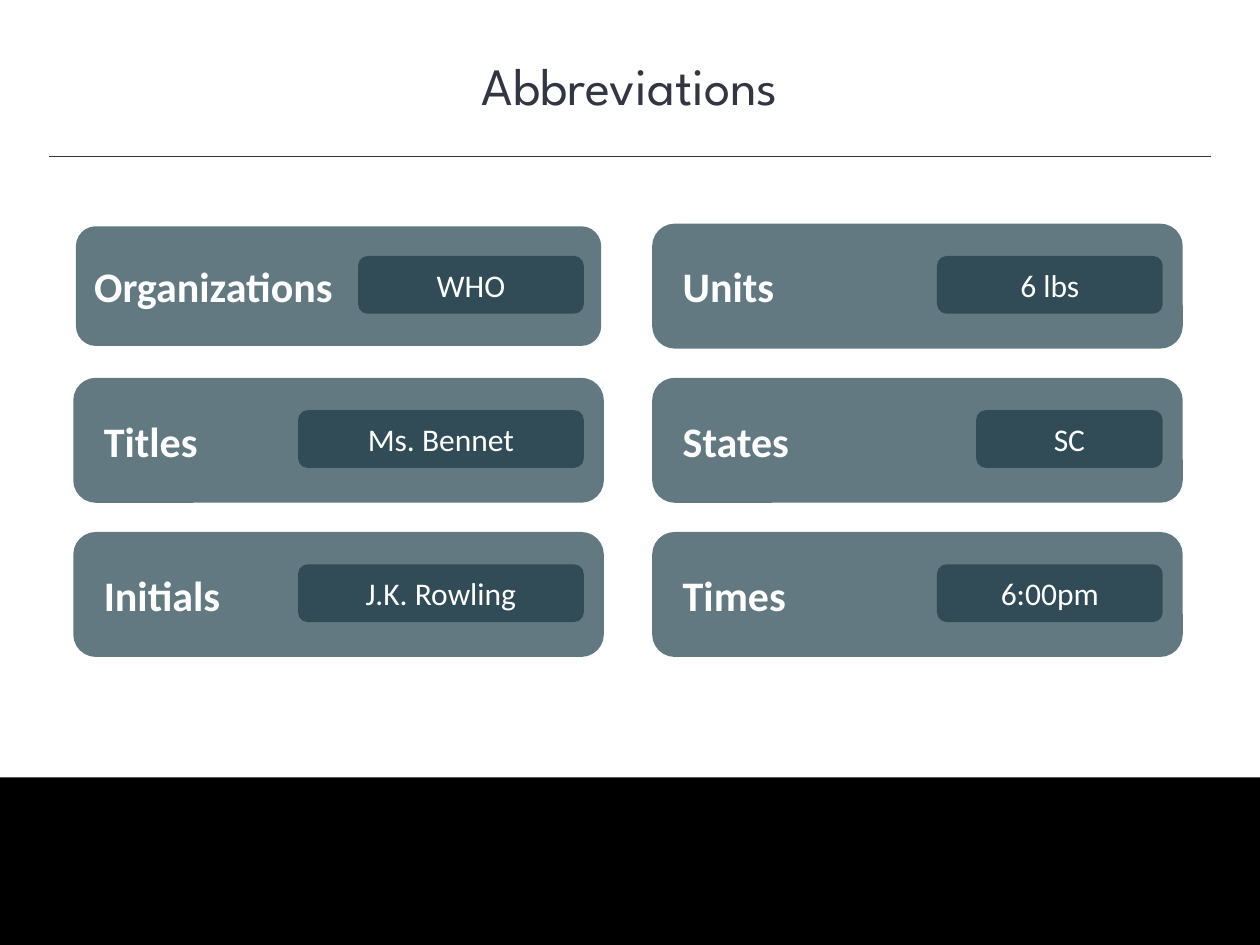
from lxml.etree import SubElement
from pptx import Presentation
from pptx.dml.color import RGBColor
from pptx.enum.shapes import MSO_CONNECTOR, MSO_SHAPE
from pptx.enum.text import MSO_ANCHOR, MSO_AUTO_SIZE, PP_ALIGN
from pptx.oxml.ns import qn
from pptx.util import Pt

INK, CARD, PILL, WHITE, BLACK = "323542", "627981", "314C57", "FFFFFF", "000000"
CARD_WIDTH, CARD_HEIGHT, PILL_HEIGHT = 300.2, 68.4, 33


def add_block(kind, left, top, width, height, color):
    """Add a filled shape without line or shadow."""
    block = page.shapes.add_shape(kind, Pt(left), Pt(top), Pt(width), Pt(height))
    block.shadow.inherit = False
    block.fill.solid()
    block.fill.fore_color.rgb = RGBColor.from_string(color)
    block.line.fill.background()
    return block


def write(box, text, font, size, color, align, anchor, bold=False):
    frame = box.text_frame
    frame.word_wrap = True
    frame.auto_size = MSO_AUTO_SIZE.NONE
    frame.vertical_anchor = anchor
    para = frame.paragraphs[0]
    para.alignment = align
    span = para.add_run()
    span.text = text
    span.font.name = font
    span.font.size = Pt(size)
    span.font.bold = bold
    span.font.color.rgb = RGBColor.from_string(color)


deck = Presentation()
deck.slide_width, deck.slide_height = Pt(720), Pt(540)
page = deck.slides.add_slide(deck.slide_layouts[5])
page.background.fill.solid()
page.background.fill.fore_color.rgb = RGBColor.from_string(WHITE)

title = page.shapes.title
title.left, title.top, title.width, title.height = Pt(0), Pt(26.6), Pt(720), Pt(43.9)
write(title, "Abbreviations", "League Spartan", 30, INK, PP_ALIGN.CENTER, MSO_ANCHOR.TOP)

rule = page.shapes.add_connector(MSO_CONNECTOR.STRAIGHT, Pt(28), Pt(89.5), Pt(692), Pt(89.5))
rule.line.color.rgb = RGBColor.from_string(INK)
rule.line.width = Pt(1)
SubElement(rule._element.spPr, qn("a:effectLst"))

add_block(MSO_SHAPE.RECTANGLE, 0, 444.2, 720, 95.8, BLACK)

# Each column: left edge, then (category, example, width of the example)
columns = [
    (43.4, [("Organizations", "WHO", 129), ("Titles", "Ms. Bennet", 163.3),
            ("Initials", "J.K. Rowling", 163.3)]),
    (374.2, [("Units", "6 lbs", 129), ("States", "SC", 106.6), ("Times", "6:00pm", 129)]),
]
for left, entries in columns:
    for row, (category, example, pill_width) in enumerate(entries):
        top = 129.3 + 88.1 * row
        card = add_block(MSO_SHAPE.ROUNDED_RECTANGLE, left, top, CARD_WIDTH, CARD_HEIGHT, CARD)
        if category != "Organizations":
            card.line.color.rgb = RGBColor.from_string(CARD)
            card.line.width = Pt(3)
            card.text_frame.margin_left = Pt(12.6)
        write(card, category, "Calibri", 24, WHITE, PP_ALIGN.LEFT, MSO_ANCHOR.MIDDLE, bold=True)

        pill_left = left + CARD_WIDTH - 10 - pill_width
        pill = add_block(MSO_SHAPE.ROUNDED_RECTANGLE, pill_left, top + 17, pill_width,
                         PILL_HEIGHT, PILL)
        write(pill, example, "Calibri", 18, WHITE, PP_ALIGN.CENTER, MSO_ANCHOR.MIDDLE)

deck.save("out.pptx")
